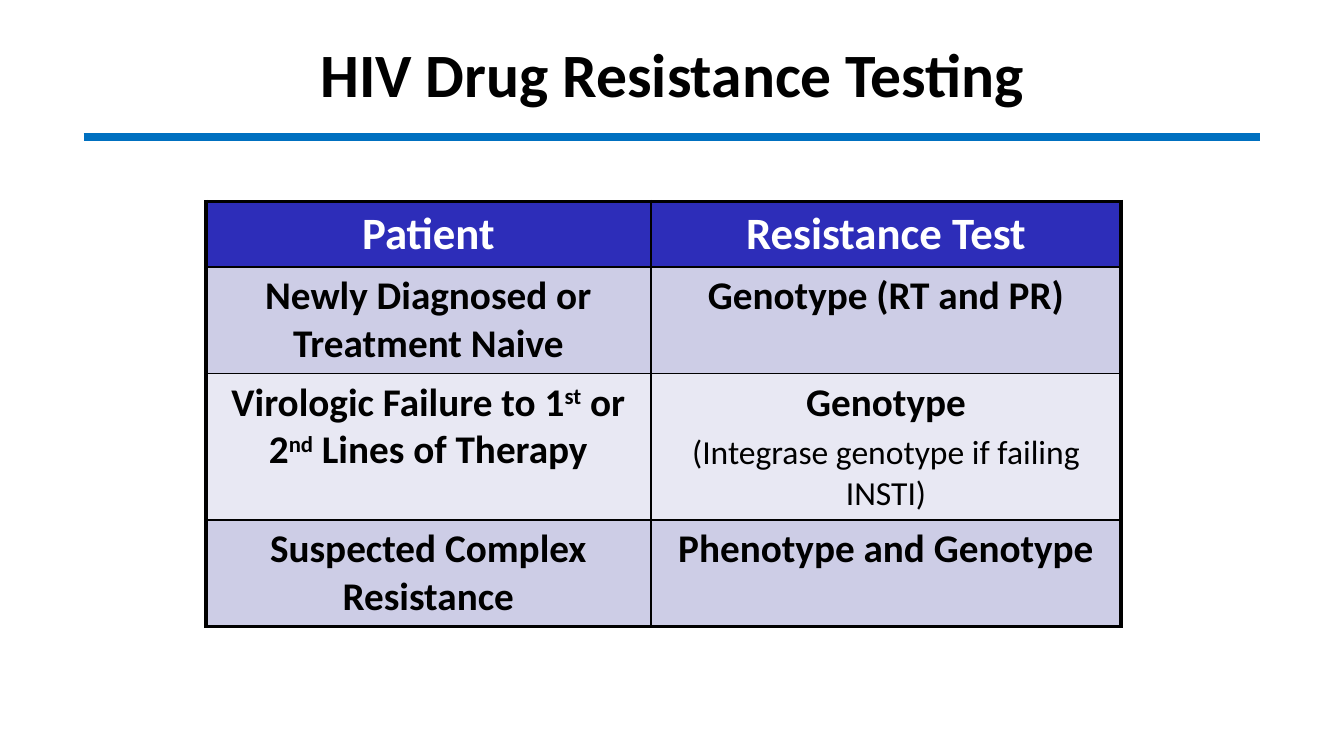
import pptx
import pptx.util
import pptx.dml.color
import pptx.enum.shapes
import pptx.enum.text
import pptx.oxml
import pptx.oxml.ns
from pptx.util import Cm

TITLE = "HIV Drug Resistance Testing"
FONT = "Calibri"
COLORS = {"black": "000000", "white": "FFFFFF", "rule": "0070C0",
          "head": "2D2DB9", "dark": "CDCDE6", "light": "E8E8F3"}
HEAD, BODY, NOTE = (24, True, "white"), (21, True, "black"), (18, False, "black")
ROWS = [
    ("head", 1.22, [[(HEAD, ["Patient"])], [(HEAD, ["Resistance Test"])]]),
    ("dark", 2.01, [[(BODY, ["Newly Diagnosed or Treatment Naive"])],
                    [(BODY, ["Genotype (RT and PR)"])]]),
    ("light", 2.77, [[(BODY, ["Virologic Failure to 1", "st", " or 2", "nd",
                              " Lines of Therapy"])],
                     [(BODY, ["Genotype"]),
                      (NOTE, ["(Integrase genotype if failing INSTI)"])]]),
    ("dark", 1.98, [[(BODY, ["Suspected Complex Resistance"])],
                    [(BODY, ["Phenotype and Genotype"])]]),
]
WIDTHS = [8.41, 8.89]
RAISED = {"st", "nd"}
THICK, THIN = 2.25, 1


def color(name):
    """Return the named colour."""
    return pptx.dml.color.RGBColor.from_string(COLORS[name])


def write(para, style, parts):
    """Add centred runs in one style, raising ordinal endings."""
    size, bold, tint = style
    para.alignment = pptx.enum.text.PP_ALIGN.CENTER
    for part in parts:
        run = para.add_run()
        run.text = part
        font = run.font
        font.name, font.size, font.bold = FONT, pptx.util.Pt(size), bold
        font.color.rgb = color(tint)
        if part in RAISED:
            run._r.get_or_add_rPr().set("baseline", "30000")


def border(cell, sides):
    """Draw the cell borders from a dict of side and width."""
    props = cell._tc.get_or_add_tcPr()
    for place, (side, width) in enumerate(sides.items()):
        props.insert(place, pptx.oxml.parse_xml(
            f'<a:ln{side} {pptx.oxml.ns.nsdecls("a")} w="{pptx.util.Pt(width)}">'
            f'<a:solidFill><a:srgbClr val="{COLORS["black"]}"/></a:solidFill>'
            f'</a:ln{side}>'))


def fill(cell, tint, paras):
    """Set the cell fill, margins and text."""
    cell.fill.solid()
    cell.fill.fore_color.rgb = color(tint)
    cell.margin_left = cell.margin_right = Cm(0.18)
    cell.margin_top = cell.margin_bottom = Cm(0.1)
    frame = cell.text_frame
    for i, (style, parts) in enumerate(paras):
        para = frame.add_paragraph() if i else frame.paragraphs[0]
        if i:
            para.space_before = pptx.util.Pt(3)
        write(para, style, parts)


def main():
    """Build the slide and save it."""
    deck = pptx.Presentation()
    deck.slide_width, deck.slide_height = Cm(25.4), Cm(14.29)
    slide = deck.slides.add_slide(deck.slide_layouts[5])

    title = slide.shapes.title
    title.left, title.top, title.width, title.height = map(Cm, (4.29, 0.18, 16.84, 2.39))
    title.text_frame.vertical_anchor = pptx.enum.text.MSO_ANCHOR.MIDDLE
    write(title.text_frame.paragraphs[0], (33, True, "black"), [TITLE])

    rule = slide.shapes.add_connector(
        pptx.enum.shapes.MSO_CONNECTOR.STRAIGHT, Cm(1.58), Cm(2.59), Cm(23.82), Cm(2.59))
    rule.line.color.rgb = color("rule")
    rule.line.width = pptx.util.Pt(4.5)
    rule._element.spPr.append(
        pptx.oxml.parse_xml(f'<a:effectLst {pptx.oxml.ns.nsdecls("a")}/>'))

    high = sum(height for _, height, _ in ROWS)
    table = slide.shapes.add_table(len(ROWS), len(WIDTHS), Cm(3.89), Cm(3.81),
                                   Cm(sum(WIDTHS)), Cm(high)).table
    for col, width in zip(table.columns, WIDTHS):
        col.width = Cm(width)
    last, end = len(ROWS) - 1, len(WIDTHS) - 1
    for r, (tint, height, cells) in enumerate(ROWS):
        table.rows[r].height = Cm(height)
        for c, paras in enumerate(cells):
            cell = table.cell(r, c)
            fill(cell, tint, paras)
            outer = {"L": c == 0, "R": c == end, "T": r == 0, "B": r == last}
            border(cell, {side: THICK if edge else THIN for side, edge in outer.items()})

    deck.save("out.pptx")


if __name__ == "__main__":
    main()
